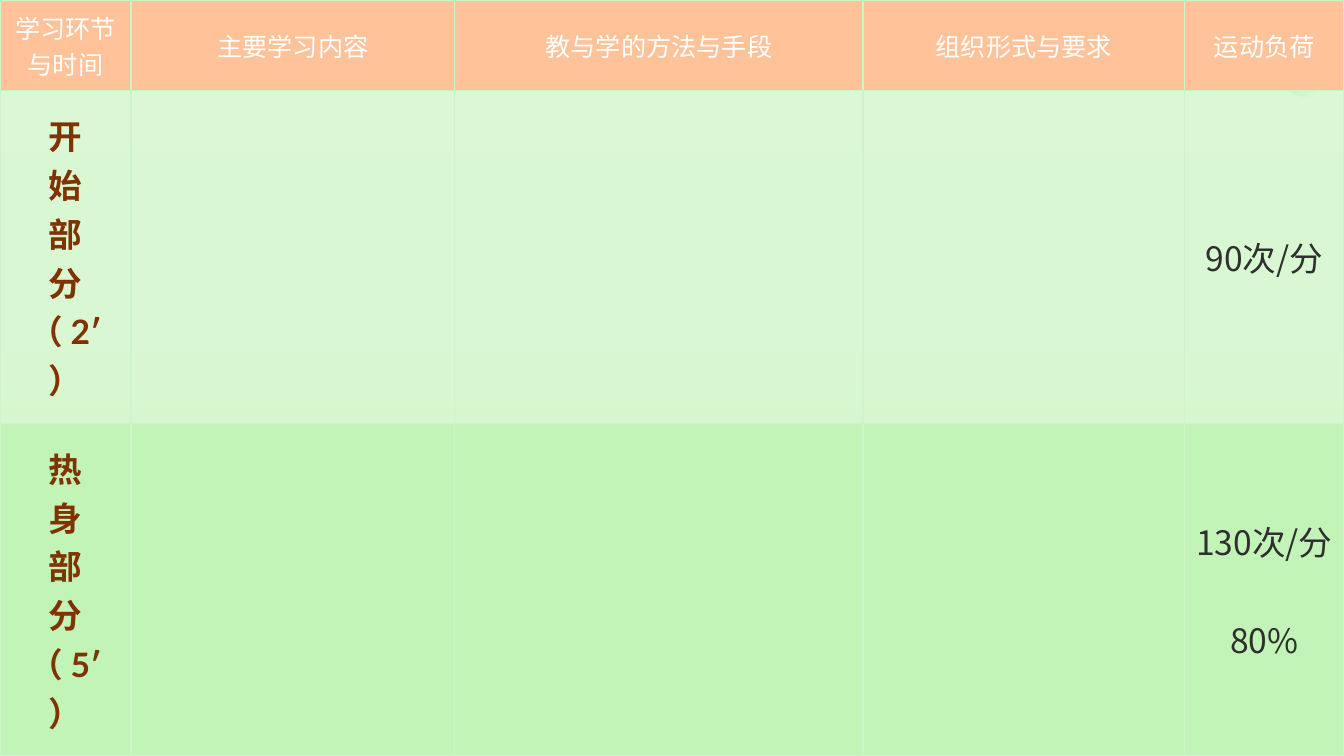
from math import cos, radians, sin

from lxml import etree
from pptx import Presentation
from pptx.dml.color import RGBColor
from pptx.enum.shapes import MSO_SHAPE
from pptx.enum.text import MSO_ANCHOR, PP_ALIGN
from pptx.oxml import parse_xml
from pptx.oxml.ns import nsdecls, qn
from pptx.util import Inches, Pt

HEADER_FILL, BODY_FILL, BORDER = "FFC299", "C1F4B6", "CEF4CC"
WHITE, BROWN, DARK = "FFFFFF", "803300", "2F2F2F"
LATIN, CHINESE = "Lato", "Noto Sans CJK SC"


def set_gradient(fill, parent, stops, angle):
    """Fill parent with (position, colour, opacity) stops, all in percent."""
    fill.solid()
    gradient = parse_xml(f'<a:gradFill {nsdecls("a")} rotWithShape="1"><a:gsLst/>'
                         f'<a:lin ang="{angle * 60000}" scaled="0"/></a:gradFill>')
    for position, color, opacity in stops:
        stop = etree.SubElement(gradient[0], qn("a:gs"), pos=str(position * 1000))
        rgb = etree.SubElement(stop, qn("a:srgbClr"), val=color)
        etree.SubElement(rgb, qn("a:alpha"), val=str(opacity * 1000))
    parent.replace(parent.find(qn("a:solidFill")), gradient)


def write_paragraph(paragraph, text, size, color, bold, font):
    paragraph.alignment = PP_ALIGN.CENTER
    run = paragraph.add_run()
    run.text = text
    run.font.size = Pt(size)
    run.font.bold = bold
    run.font.name = font
    run.font.color.rgb = RGBColor.from_string(color)
    etree.SubElement(run.font._element, qn("a:ea"), typeface=CHINESE)


presentation = Presentation()
presentation.slide_width = Inches(13.33)
presentation.slide_height = Inches(7.5)
slide = presentation.slides.add_slide(presentation.slide_layouts[6])

# Background
background_fill = slide.background.fill
background_fill.solid()
set_gradient(background_fill, slide.element.find(".//" + qn("p:bgPr")),
             [(48, WHITE, 100), (100, "E0F9DB", 100)], 90)

veil = slide.shapes.add_shape(MSO_SHAPE.RECTANGLE, 0, 0, Inches(13.33), Inches(7.5))
set_gradient(veil.fill, veil.element.spPr,
             [(0, "F9FEF8", 80), (100, "E0F9DB", 78)], 90)

# Corner disc, cut off by the top and right edges
arc = [(Inches(13.2 + 0.88 * cos(radians(angle))), Inches(0.13 + 0.88 * sin(radians(angle))))
       for angle in range(82, 189, 2)]
builder = slide.shapes.build_freeform(Inches(13.33), 0)
builder.add_line_segments([(Inches(13.33), Inches(0.99)), *arc, (Inches(12.34), 0)])
corner = builder.convert_to_shape()
set_gradient(corner.fill, corner.element.spPr,
             [(0, "237312", 100), (41, "34AA1A", 47), (82, "34AA1A", 0)], 45)

for shape in (veil, corner):
    shape.line.fill.background()
    shape.shadow.inherit = False

# Lesson plan table
headers = ["学习环节与时间", "主要学习内容", "教与学的方法与手段", "组织形式与要求", "运动负荷"]
stages = [
    (["开", "始", "部", "分", "（ 2′ ）"], ["90次/分"], 50),
    (["热", "身", "部", "分", "（ 5′ ）"], ["130次/分", "80%"], 100),
]
column_widths = [1.3, 3.21, 4.05, 3.19, 1.58]
row_heights = [0.9, 3.3, 3.3]

table = slide.shapes.add_table(len(row_heights), len(column_widths), 0, 0,
                               Inches(13.33), Inches(7.5)).table
table.first_row = False
table.horz_banding = False
for column, width in zip(table.columns, column_widths):
    column.width = Inches(width)
for row, height in zip(table.rows, row_heights):
    row.height = Inches(height)

for cell in table.iter_cells():
    cell.vertical_anchor = MSO_ANCHOR.MIDDLE
    cell.fill.solid()
    cell.fill.fore_color.rgb = RGBColor.from_string(BODY_FILL)
    properties = cell._tc.tcPr
    for index, side in enumerate(("lnL", "lnR", "lnT", "lnB")):
        properties.insert(index, parse_xml(
            f'<a:{side} {nsdecls("a")} w="12700"><a:solidFill>'
            f'<a:srgbClr val="{BORDER}"/></a:solidFill></a:{side}>'))

for column, header in enumerate(headers):
    cell = table.cell(0, column)
    cell.fill.fore_color.rgb = RGBColor.from_string(HEADER_FILL)
    write_paragraph(cell.text_frame.paragraphs[0], header, 18, WHITE, False, LATIN)

for row, (stage, load, opacity) in enumerate(stages, start=1):
    for cell in table.rows[row].cells:
        rgb = cell._tc.tcPr.find(qn("a:solidFill"))[0]
        etree.SubElement(rgb, qn("a:alpha"), val=str(opacity * 1000))
    for column, lines, color, bold, font in ((0, stage, BROWN, True, LATIN),
                                             (4, load, DARK, False, CHINESE)):
        frame = table.cell(row, column).text_frame
        for number, line in enumerate(lines):
            paragraph = frame.add_paragraph() if number else frame.paragraphs[0]
            if number and lines is load:
                paragraph.space_before = Pt(35)
            write_paragraph(paragraph, line, 24, color, bold, font)

presentation.save("out.pptx")
